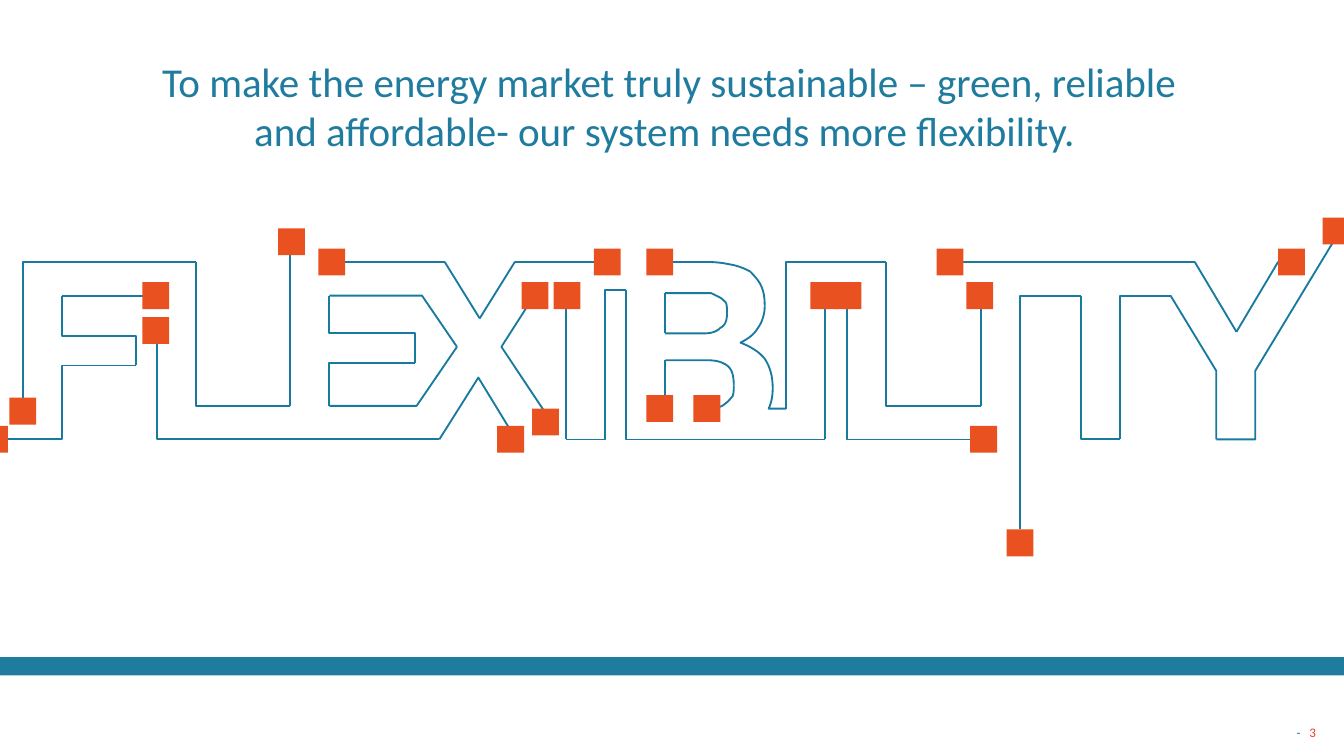
from lxml import etree
from pptx import Presentation
from pptx import util as u
from pptx.dml.color import RGBColor
from pptx.enum import shapes, text
from pptx.oxml import ns

TEAL = RGBColor(0x20, 0x7C, 0x9E)
OUTLINE = RGBColor(0x19, 0x7A, 0xA0)
ORANGE = RGBColor(0xE9, 0x51, 0x20)
NUMBER_RED = RGBColor(0xEE, 0x3E, 0x27)
FONT = "Calibri"

TITLE = ("To make the energy market truly sustainable – green, reliable "
         "and affordable- our system needs more flexibility. ")

# Shared heights of the lettering
TOP, INNER, SOCKET, FLOOR, BASE = 140.4, 158.4, 155.5, 217.4, 235.4
BOWL_TOP, BOWL_BASE, WAIST, FOOT = 157, 178.6, 193, 218.9

# Straight strokes: start and end
LINES = [
    ((33.1, INNER), (84.2, INNER)),
    ((155.5, 128.9), (155.5, FLOOR)),
    ((525.6, INNER), (525.6, FLOOR)),
    ((442.1, BASE), (442.1, SOCKET)),
    ((303.1, SOCKET), (303.1, BASE)),
    ((356.4, BOWL_BASE), (356.4, BOWL_TOP)),
    ((356.4, FOOT), (356.4, WAIST)),
]

# Bent strokes: two numbers are a corner, six are a Bezier curve
STROKES = [
    # F and L
    [(72.7, 195.8), (72.7, 180), (33.1, 180), (33.1, INNER)],
    [(-1.4, BASE), (33.1, BASE), (33.1, 195.8), (72.7, 195.8)],
    [(105.1, TOP), (12.2, TOP), (12.2, 223.2)],
    [(155.5, FLOOR), (105.1, FLOOR), (105.1, TOP)],
    [(84.2, 172.8), (84.2, BASE), (235.4, BASE)],
    # E and X
    [(257, 170.6), (238.3, TOP), (176.4, TOP)],
    [(324, TOP), (275.8, TOP), (257, 170.6)],
    [(235.4, BASE), (256.3, 202.3), (276.5, BASE)],
    [(176.4, INNER), (226.1, INNER), (244.8, 185.8)],
    [(222.5, 194.4), (222.5, 178.6), (176.4, 178.6), (176.4, INNER)],
    [(176.4, FLOOR), (176.4, 194.4), (222.5, 194.4)],
    [(244.8, 185.8), (223.2, FLOOR), (176.4, FLOOR)],
    [(295.9, 226.8), (268.6, 185.8), (288, SOCKET)],
    # First I
    [(335.5, SOCKET), (335.5, BASE), (442.1, BASE)],
    [(303.1, BASE), (324, BASE), (324, SOCKET), (335.5, SOCKET)],
    # B, outside
    [(409.7, 164.2), (409.7, 159.1, 409, 155.5, 407.5, 152.6),
     (406.1, 149.8, 403.9, 147.6, 401.8, 145.4),
     (398.9, 144, 396, 142.6, 391.7, 141.8),
     (388.1, 141.1, 384.5, TOP, 379.4, TOP), (355.7, TOP)],
    [(421.2, FOOT), (411.8, FOOT), (413.3, 216, 414, 211.7, 414, 208.1),
     (414, 201.6, 412.6, 196.6, 409.7, 192.2),
     (406.8, 188.6, 402.5, 185.8, 396.7, 183.6),
     (401, 181.4, 403.9, 179.3, 406.1, 175.7),
     (408.2, 172.8, 409.7, 168.5, 409.7, 164.2)],
    # B, inside
    [(389.5, 167.8), (389.5, 171.4, 388.8, 174.2, 385.9, 175.7),
     (383.8, 177.8, 380.9, BOWL_BASE, 377.3, BOWL_BASE), (356.4, BOWL_BASE)],
    [(356.4, BOWL_TOP), (375.1, BOWL_TOP),
     (377.3, BOWL_TOP, 378.7, BOWL_TOP, 380.9, BOWL_TOP),
     (382.3, 157.7, 383.8, 158.4, 385.2, 159.1),
     (386.6, 159.8, 387.4, 160.6, 388.8, 162),
     (389.5, 163.4, 389.5, 164.9, 389.5, 167.8)],
    [(393.1, 206.6), (393.1, 208.8, 393.1, 211, 392.4, 212.4),
     (391, 213.8, 390.2, 215.3, 388.8, 216),
     (387.4, 217.4, 385.9, 218.2, 383.8, 218.2),
     (382.3, FOOT, 380.2, FOOT, 378, FOOT)],
    [(356.4, WAIST), (378.7, WAIST), (383, WAIST, 386.6, 193.7, 389.5, 195.8),
     (392.4, 198, 393.1, 201.6, 393.1, 206.6)],
    # Second I and L
    [(474.5, TOP), (421.2, TOP), (421.2, FOOT)],
    [(525.6, FLOOR), (474.5, FLOOR), (474.5, TOP)],
    [(453.6, SOCKET), (453.6, BASE), (525.6, BASE)],
    # T and Y
    [(662.4, 177.8), (640.1, TOP), (509.8, TOP)],
    [(695.5, TOP), (684.7, TOP), (662.4, 177.8)],
    [(651.6, BASE), (672.5, BASE), (672.5, 198.7), (718.6, 122.4)],
    [(627.1, INNER), (651.6, 198.7), (651.6, BASE)],
    [(599.8, BASE), (599.8, INNER), (627.1, INNER)],
    [(578.9, INNER), (578.9, BASE), (599.8, BASE)],
    [(546.5, 283.7), (546.5, INNER), (578.9, INNER)],
]

# Square end nodes: top of each row and the left edges in it
NODE_SIZE = 14.4
NODES = {
    116.6: [708.6],
    122.4: [149],
    133.2: [170.6, 318.2, 346.3, 501.8, 684.7],
    151.2: [76.3, 279.4, 296.6, 434.2, 447.1, 517.7],
    169.9: [76.3],
    211.7: [346.3, 371.5],
    213.1: [5],
    218.9: [285.1],
    228.2: [-10.1, 266.4, 519.8],
    283.7: [539.3],
}
CURVE_STEPS = 8


def flatten(stroke):
    """Turn corners and Bezier curves into a list of points."""
    points = [stroke[0]]
    for part in stroke[1:]:
        if len(part) == 2:
            points.append(part)
            continue
        controls = [points[-1], part[:2], part[2:4], part[4:]]
        for step in range(1, CURVE_STEPS + 1):
            t = step / CURVE_STEPS
            weights = ((1 - t) ** 3, 3 * t * (1 - t) ** 2, 3 * t * t * (1 - t), t ** 3)
            points.append(tuple(sum(w * point[axis] for w, point in zip(weights, controls))
                                for axis in (0, 1)))
    return points


def style_outline(shape):
    shape.line.color.rgb = OUTLINE
    shape.line.width = u.Pt(1)


def add_rectangle(parent, left, top, width, height, color):
    shape = parent.add_shape(shapes.MSO_SHAPE.RECTANGLE, u.Pt(left), u.Pt(top),
                             u.Pt(width), u.Pt(height))
    shape.shadow.inherit = False
    shape.fill.solid()
    shape.fill.fore_color.rgb = color
    shape.line.fill.background()


def add_text(slide, box, runs, size, align, anchor):
    frame = slide.shapes.add_textbox(*map(u.Pt, box)).text_frame
    frame.word_wrap = True
    frame.vertical_anchor = anchor
    paragraph = frame.paragraphs[0]
    paragraph.alignment = align
    for content, color in runs:
        run = paragraph.add_run()
        run.text = content
        run.font.name = FONT
        run.font.size = u.Pt(size)
        run.font.color.rgb = color
    return paragraph


presentation = Presentation()
presentation.slide_width, presentation.slide_height = u.Pt(720), u.Pt(405)
slide = presentation.slides.add_slide(presentation.slide_layouts[6])

# Slide number and footer bar
number = add_text(slide, (618.5, 371.5, 93.6, 28.8), [("- ", TEAL), ("3", NUMBER_RED)], 7,
                  text.PP_ALIGN.RIGHT, text.MSO_ANCHOR.BOTTOM)
number.line_spacing = 0.93
number.runs[0].font._element.set("spc", "160")  # widens the gap after the dash
add_rectangle(slide.shapes, 0, 352, 720, 9.8, TEAL)

# Outlined lettering
lettering = slide.shapes.add_group_shape().shapes
for start, end in LINES:
    connector = lettering.add_connector(shapes.MSO_CONNECTOR.STRAIGHT,
                                        *map(u.Pt, start + end))
    style_outline(connector)
    etree.SubElement(connector._element.spPr, ns.qn("a:effectLst"))
for stroke in STROKES:
    first, *rest = [(u.Pt(x), u.Pt(y)) for x, y in flatten(stroke)]
    builder = lettering.build_freeform(*first)
    builder.add_line_segments(rest, close=False)
    outline = builder.convert_to_shape()
    outline.shadow.inherit = False
    outline.fill.background()
    style_outline(outline)

# End nodes
for top, lefts in NODES.items():
    for left in lefts:
        add_rectangle(lettering, left, top, NODE_SIZE, NODE_SIZE, ORANGE)

# Headline
add_text(slide, (64.8, 26.6, 587.5, 60.5), [(TITLE, TEAL)], 22,
         text.PP_ALIGN.CENTER, text.MSO_ANCHOR.TOP)

presentation.save("out.pptx")
